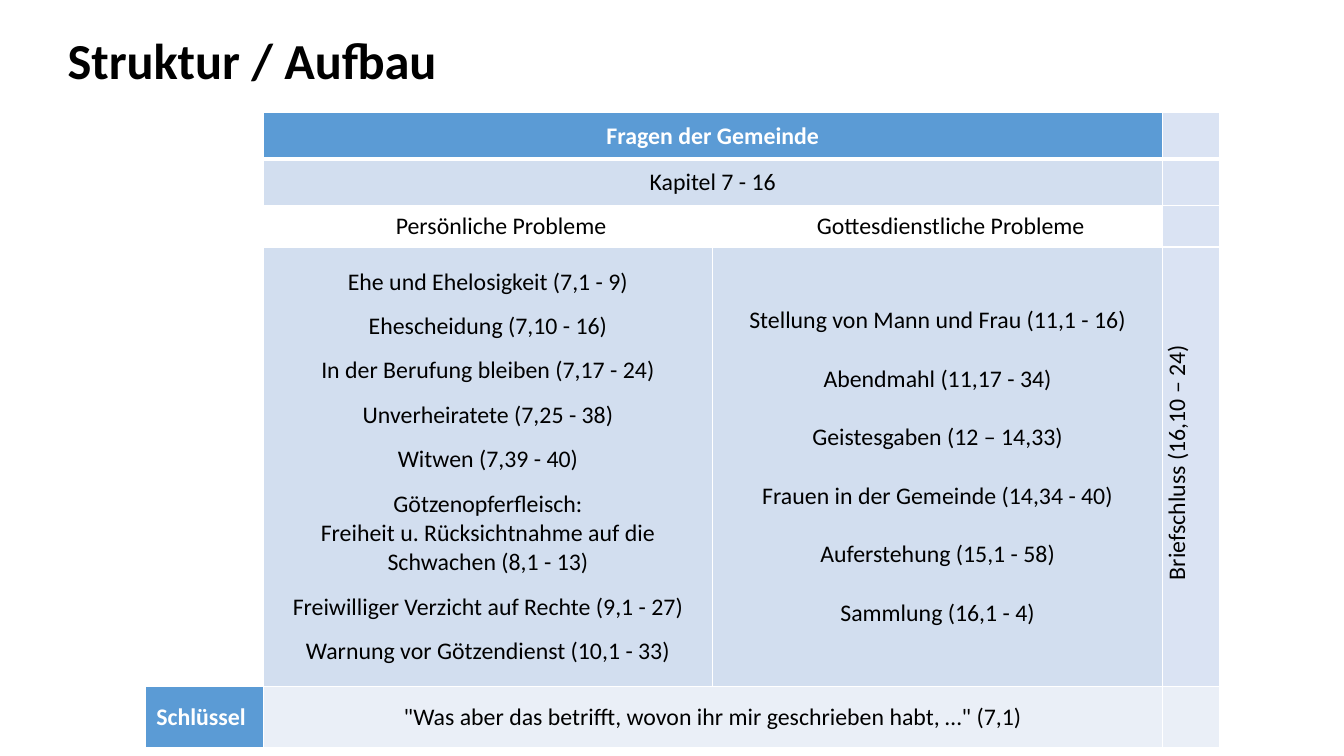
from dataclasses import dataclass

from lxml.etree import SubElement
from pptx import Presentation
from pptx.dml.color import RGBColor
from pptx.enum.text import MSO_ANCHOR, MSO_AUTO_SIZE, PP_ALIGN
from pptx.oxml.ns import qn
from pptx.slide import Slide
from pptx.table import Table, _Cell
from pptx.util import Pt

SCALE = 9144  # EMU per px, 100 px to the inch


@dataclass(frozen=True)
class Theme:
    font: str = "Calibri"
    title: int = 36
    body: int = 17
    black: str = "000000"
    white: str = "FFFFFF"
    blue: str = "5B9BD5"
    light: str = "D2DEEF"
    side: str = "DAE3F3"
    pale: str = "EAEFF7"
    rule: int = 1
    thick: int = 3


@dataclass(frozen=True)
class Entry:
    row: int
    col: int
    fill: str
    lines: tuple[str, ...] = ()
    span: int = 1
    gap: int = 0  # points between lines
    pad: int = 5  # px above and below
    head: bool = False
    align: PP_ALIGN = PP_ALIGN.CENTER
    turned: bool = False


THEME = Theme()
COLS = (117, 446, 26, 420, 57)
ROWS = (46, 46, 41, 436, 61)
LAST = len(COLS) - 1

# Table content
PERSONAL = (
    "Ehe und Ehelosigkeit (7,1 - 9)",
    "Ehescheidung (7,10 - 16)",
    "In der Berufung bleiben (7,17 - 24)",
    "Unverheiratete (7,25 - 38)",
    "Witwen (7,39 - 40)",
    "Götzenopferfleisch:\vFreiheit u. Rücksichtnahme auf die Schwachen (8,1 - 13)",
    "Freiwilliger Verzicht auf Rechte (9,1 - 27)",
    "Warnung vor Götzendienst (10,1 - 33)",
)
WORSHIP = (
    "Stellung von Mann und Frau (11,1 - 16)",
    "Abendmahl (11,17 - 34)",
    "Geistesgaben (12 – 14,33)",
    "Frauen in der Gemeinde (14,34 - 40)",
    "Auferstehung (15,1 - 58)",
    "Sammlung (16,1 - 4)",
)
QUOTE = '"Was aber das betrifft, wovon ihr mir geschrieben habt, …" (7,1)'
ENTRIES = (
    *(Entry(row, 0, THEME.white) for row in range(4)),
    *(Entry(row, LAST, THEME.side) for row in range(3)),
    Entry(0, 1, THEME.blue, ("Fragen der Gemeinde",), span=3, head=True),
    Entry(1, 1, THEME.light, ("Kapitel 7 - 16",), span=3),
    Entry(2, 1, THEME.white, ("Persönliche Probleme",), span=2),
    Entry(2, 3, THEME.white, ("Gottesdienstliche Probleme",), pad=0),
    Entry(3, 1, THEME.light, PERSONAL, gap=11, pad=0),
    Entry(3, 2, THEME.light, WORSHIP, span=2, gap=21),
    Entry(3, LAST, THEME.side, ("Briefschluss (16,10 – 24)",), pad=0, turned=True),
    Entry(4, 0, THEME.blue, ("Schlüssel",), pad=0, head=True, align=PP_ALIGN.LEFT),
    Entry(4, 1, THEME.pale, (QUOTE,), span=3),
    Entry(4, LAST, THEME.pale),
)


def px(size: int) -> int:
    return size * SCALE


def color(code: str) -> RGBColor:
    return RGBColor.from_string(code)


def style(font, size: int, code: str, bold: bool) -> None:
    font.name, font.size, font.bold = THEME.font, Pt(size), bold
    font.color.rgb = color(code)


def border(cell: _Cell, row: int) -> None:
    """White rules, with a thick one under the first row."""
    props = cell._tc.get_or_add_tcPr()
    heavy = {0: "lnB", 1: "lnT"}.get(row)
    for side in ("lnL", "lnR", "lnT", "lnB"):
        width = THEME.thick if side == heavy else THEME.rule
        line = SubElement(props, qn(f"a:{side}"), w=str(Pt(width)))
        fill = SubElement(line, qn("a:solidFill"))
        SubElement(fill, qn("a:srgbClr"), val=THEME.white)


def draw_entry(table: Table, entry: Entry) -> None:
    cell = table.cell(entry.row, entry.col)
    if entry.span > 1:
        cell.merge(table.cell(entry.row, entry.col + entry.span - 1))
    cell.fill.solid()
    cell.fill.fore_color.rgb = color(entry.fill)
    cell.margin_left = cell.margin_right = px(11)
    cell.margin_top = cell.margin_bottom = px(entry.pad)
    cell.vertical_anchor = MSO_ANCHOR.TOP if entry.turned else MSO_ANCHOR.MIDDLE
    cell.text_frame.text = "\n".join(entry.lines)
    ink = THEME.white if entry.head else THEME.black
    for index, para in enumerate(cell.text_frame.paragraphs):
        para.alignment = entry.align
        para.space_before = Pt(entry.gap if index else 0)
        for run in para.runs:
            style(run.font, THEME.body, ink, entry.head)
    if entry.turned:
        cell._tc.tcPr.set("vert", "vert270")
        para = cell.text_frame.paragraphs[0]
        para._p.get_or_add_pPr().set("marL", str(px(8)))


def draw_table(slide: Slide) -> None:
    frame = slide.shapes.add_table(
        len(ROWS), len(COLS), px(144), px(112), px(sum(COLS)), px(sum(ROWS))
    )
    table = frame.table
    table.first_row = table.horz_banding = False
    for col, width in zip(table.columns, COLS):
        col.width = px(width)
    for index, height in enumerate(ROWS):
        table.rows[index].height = px(height)
        for cell in table.rows[index].cells:
            border(cell, index)
    for entry in ENTRIES:
        draw_entry(table, entry)


def draw_title(slide: Slide) -> None:
    title = slide.shapes.title
    title.left, title.top, title.width, title.height = map(px, (57, 24, 391, 71))
    frame = title.text_frame
    frame.text = "Struktur / Aufbau"
    frame.word_wrap = False
    frame.auto_size = MSO_AUTO_SIZE.SHAPE_TO_FIT_TEXT
    frame.vertical_anchor = MSO_ANCHOR.TOP
    para = frame.paragraphs[0]
    para.alignment = PP_ALIGN.LEFT
    style(para.runs[0].font, THEME.title, THEME.black, True)


def main() -> None:
    deck = Presentation()
    deck.slide_width, deck.slide_height = px(1333), px(750)
    slide = deck.slides.add_slide(deck.slide_layouts.get_by_name("Title Only"))
    draw_title(slide)
    draw_table(slide)
    deck.save("out.pptx")


if __name__ == "__main__":
    main()
